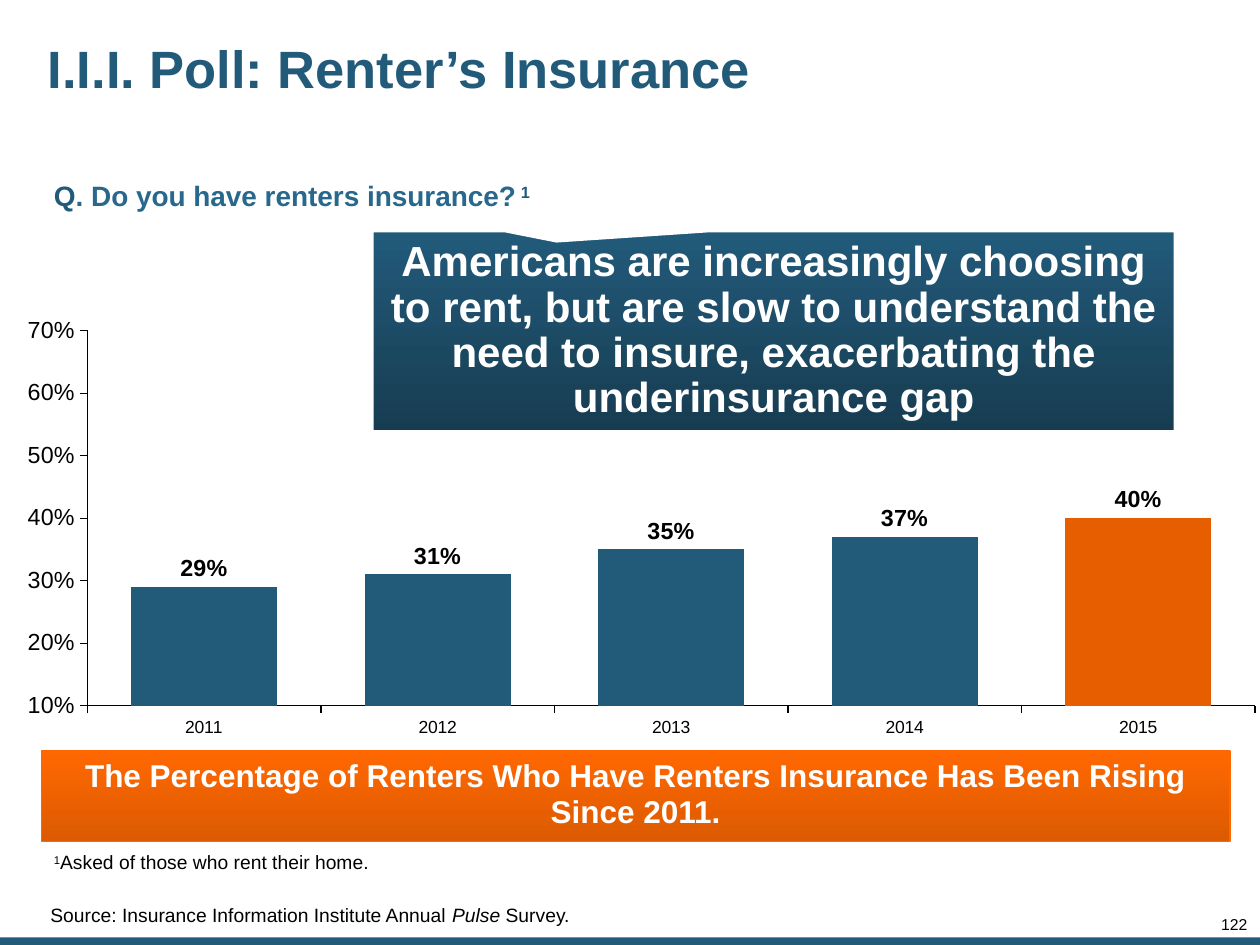
from lxml.etree import SubElement
from pptx import Presentation
from pptx.chart.data import CategoryChartData
from pptx.dml.color import RGBColor
from pptx.enum.chart import XL_CHART_TYPE, XL_LABEL_POSITION, XL_TICK_MARK
from pptx.enum.shapes import MSO_SHAPE
from pptx.enum.text import MSO_ANCHOR, PP_ALIGN
from pptx.oxml.ns import qn
from pptx.util import Inches, Pt

FONT = "Arial"
COLORS = {name: RGBColor.from_string(value) for name, value in {
    "blue": "225A7A", "light_blue": "28688C", "dark_blue": "173C51",
    "orange": "FF6801", "dark_orange": "DC5A01", "bar_orange": "E75E01",
    "black": "000000", "white": "FFFFFF",
}.items()}


def write_text(shape, runs, size, color, bold=False, align=PP_ALIGN.LEFT, spacing=1.0,
               anchor=MSO_ANCHOR.TOP, margins=(0.1, 0.05, 0.1, 0.05), wrap=True):
    """Fill a shape with one paragraph; each run is (text, style) with an optional style."""
    frame = shape.text_frame
    frame.word_wrap = wrap
    frame.vertical_anchor = anchor
    frame.margin_left, frame.margin_top, frame.margin_right, frame.margin_bottom = map(Inches, margins)
    paragraph = frame.paragraphs[0]
    paragraph.alignment = align
    paragraph.line_spacing = spacing
    for text, style in runs:
        run = paragraph.add_run()
        run.text = text
        run.font.name = FONT
        run.font.size = Pt(size)
        run.font.bold = bold
        run.font.color.rgb = COLORS["light_blue" if style == "light" else color]
        if style == "italic":
            run.font.italic = True
        if style == "superscript":
            run.font._element.set("baseline", "30000")


def add_banner(kind, box, top_color, bottom_color, line_color, line_width):
    """Add a shape with a gradient running from top to bottom."""
    shape = slide.shapes.add_shape(kind, *map(Inches, box))
    shape.shadow.inherit = False
    shape.fill.gradient()
    shape.fill.gradient_angle = 270
    for stop, color in zip(shape.fill.gradient_stops, (top_color, bottom_color)):
        stop.color.rgb = COLORS[color]
    shape.line.color.rgb = COLORS[line_color]
    shape.line.width = Pt(line_width)
    return shape


presentation = Presentation()
presentation.slide_width = Inches(10)
presentation.slide_height = Inches(7.5)
slide = presentation.slides.add_slide(presentation.slide_layouts[6])

# Footer bar
footer_bar = slide.shapes.add_shape(MSO_SHAPE.RECTANGLE, 0, Inches(7.44), Inches(10), Inches(0.06))
footer_bar.shadow.inherit = False
footer_bar.fill.solid()
footer_bar.fill.fore_color.rgb = COLORS["blue"]
footer_bar.line.fill.background()

# Title, question, notes and page number
small = {"size": 11, "color": "black", "spacing": 0.85}
texts = [
    ((0.33, 0.1, 8.09, 0.94), [("I.I.I. Poll: Renter’s Insurance", None)],
     {"size": 30, "color": "blue", "bold": True, "spacing": 0.9,
      "anchor": MSO_ANCHOR.MIDDLE, "margins": (0.05,) * 4}),
    ((0.33, 1.37, 4.04, 0.91),
     [("Q", None), (". Do you have renters insurance?", "light"), (" 1", "superscript")],
     {"size": 16, "color": "blue", "bold": True, "wrap": False}),
    ((0.33, 6.73, 5, 0.26),
     [("1", "superscript"), ("Asked of those who rent their home.", None)], small),
    ((0, 7.19, 9.44, 0.31),
     [("Source: Insurance Information Institute Annual ", None), ("Pulse", "italic"),
      (" Survey.", None)],
     {**small, "anchor": MSO_ANCHOR.BOTTOM, "margins": (0.4, 0, 0, 0.15)}),
    ((9.41, 7.28, 0.49, 0.13), [("122", None)],
     {**small, "size": 9, "align": PP_ALIGN.RIGHT, "margins": (0,) * 4}),
]
for box, runs, style in texts:
    write_text(slide.shapes.add_textbox(*map(Inches, box)), runs, **style)

# Column chart
chart_data = CategoryChartData(number_format="0%")
chart_data.categories = ["2011", "2012", "2013", "2014", "2015"]
chart_data.add_series("Renters with insurance", (0.29, 0.31, 0.35, 0.37, 0.40))
chart = slide.shapes.add_chart(XL_CHART_TYPE.COLUMN_CLUSTERED, Inches(0.11), Inches(2.51),
                               Inches(9.89), Inches(4.01), chart_data).chart
chart.has_legend = False
chart.has_title = False
chart.font.name = FONT
chart.font.size = Pt(13.3)
chart.font.color.rgb = COLORS["black"]

# Axes
value_axis = chart.value_axis
value_axis.minimum_scale, value_axis.maximum_scale, value_axis.major_unit = 0.1, 0.7, 0.1
value_axis.has_major_gridlines = False
value_axis.tick_labels.number_format = "0%"
value_axis.tick_labels.number_format_is_linked = False
for axis, size, width in ((chart.category_axis, 10, 0.95), (value_axis, 13.3, 0.25)):
    axis.major_tick_mark = XL_TICK_MARK.OUTSIDE
    axis.tick_labels.font.name = FONT
    axis.tick_labels.font.size = Pt(size)
    axis.tick_labels.font.color.rgb = COLORS["black"]
    axis.format.line.color.rgb = COLORS["black"]
    axis.format.line.width = Pt(width)

# Columns and their labels
plot = chart.plots[0]
plot.gap_width = 60
plot.vary_by_categories = False
series = plot.series[0]
series.format.fill.solid()
series.format.fill.fore_color.rgb = COLORS["blue"]
latest_column = series.points[4].format.fill
latest_column.solid()
latest_column.fore_color.rgb = COLORS["bar_orange"]
labels = series.data_labels
labels.show_value = True
labels.number_format = "0%"
labels.number_format_is_linked = False
labels.position = XL_LABEL_POSITION.OUTSIDE_END
labels.font.name = FONT
labels.font.size = Pt(13.3)
labels.font.bold = True
labels.font.color.rgb = COLORS["black"]

# Fixed inner plot area
plot_area = chart._chartSpace.chart.plotArea
for old_layout in plot_area.findall(qn("c:layout")):
    plot_area.remove(old_layout)
layout = SubElement(plot_area, qn("c:layout"))
plot_area.insert(0, layout)
manual_layout = SubElement(layout, qn("c:manualLayout"))
for tag, value in (("layoutTarget", "inner"), ("xMode", "edge"), ("yMode", "edge"),
                   ("x", "0.059"), ("y", "0.028"), ("w", "0.937"), ("h", "0.743")):
    SubElement(manual_layout, qn(f"c:{tag}")).set("val", value)

# Takeaway banner
takeaway = add_banner(MSO_SHAPE.RECTANGLE, (0.33, 5.96, 9.43, 0.72),
                      "orange", "dark_orange", "orange", 1)
write_text(takeaway, [("The Percentage of Renters Who Have Renters Insurance Has Been Rising "
                       "Since 2011.", None)],
           18, "white", bold=True, align=PP_ALIGN.CENTER, spacing=0.95,
           anchor=MSO_ANCHOR.MIDDLE, margins=(0.1, 0.05, 0.1, 0.07))

# Callout
callout = add_banner(MSO_SHAPE.RECTANGULAR_CALLOUT, (2.95, 1.83, 6.38, 1.6),
                     "blue", "dark_blue", "white", 2.25)
callout.adjustments[0] = -0.27
callout.adjustments[1] = -0.45
write_text(callout, [("Americans are increasingly choosing to rent, but are slow to understand "
                      "the need to insure, exacerbating the underinsurance gap", None)],
           24, "white", bold=True, align=PP_ALIGN.CENTER, spacing=0.9,
           anchor=MSO_ANCHOR.MIDDLE, margins=(0.1,) * 4)

presentation.save("out.pptx")
